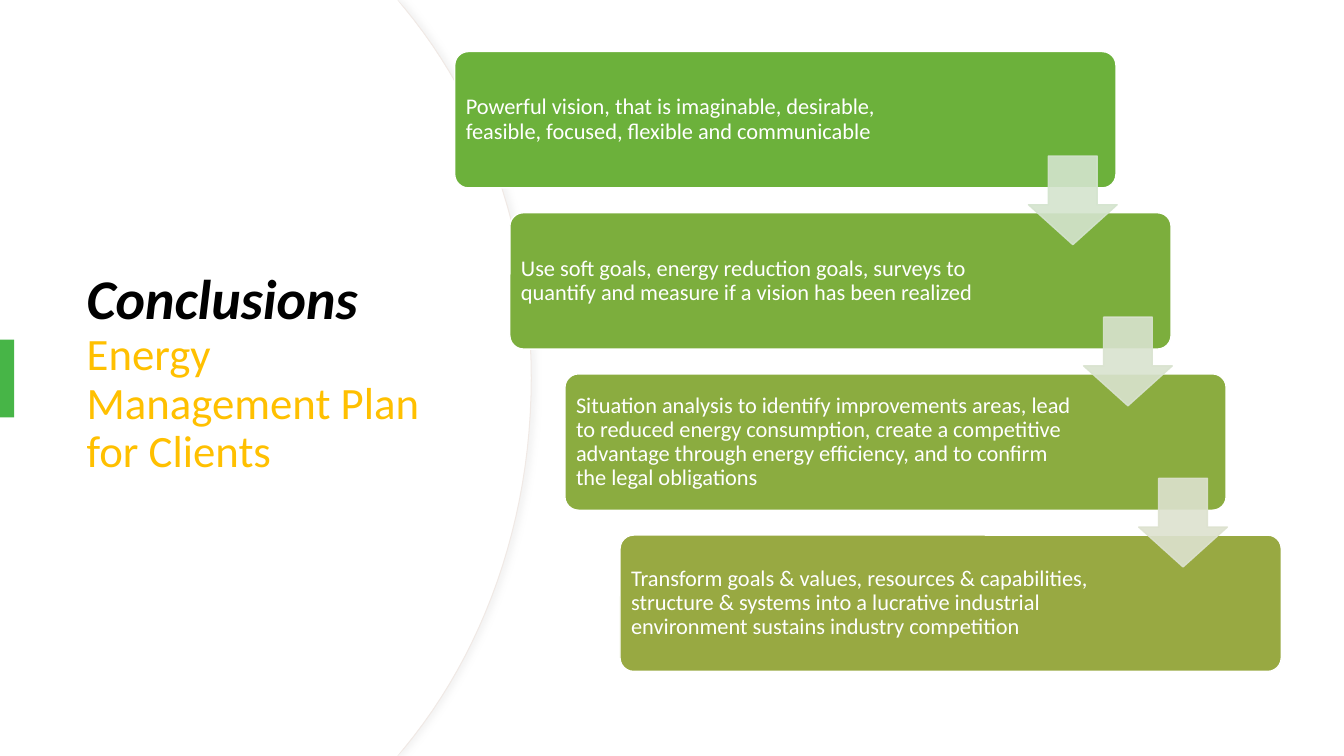
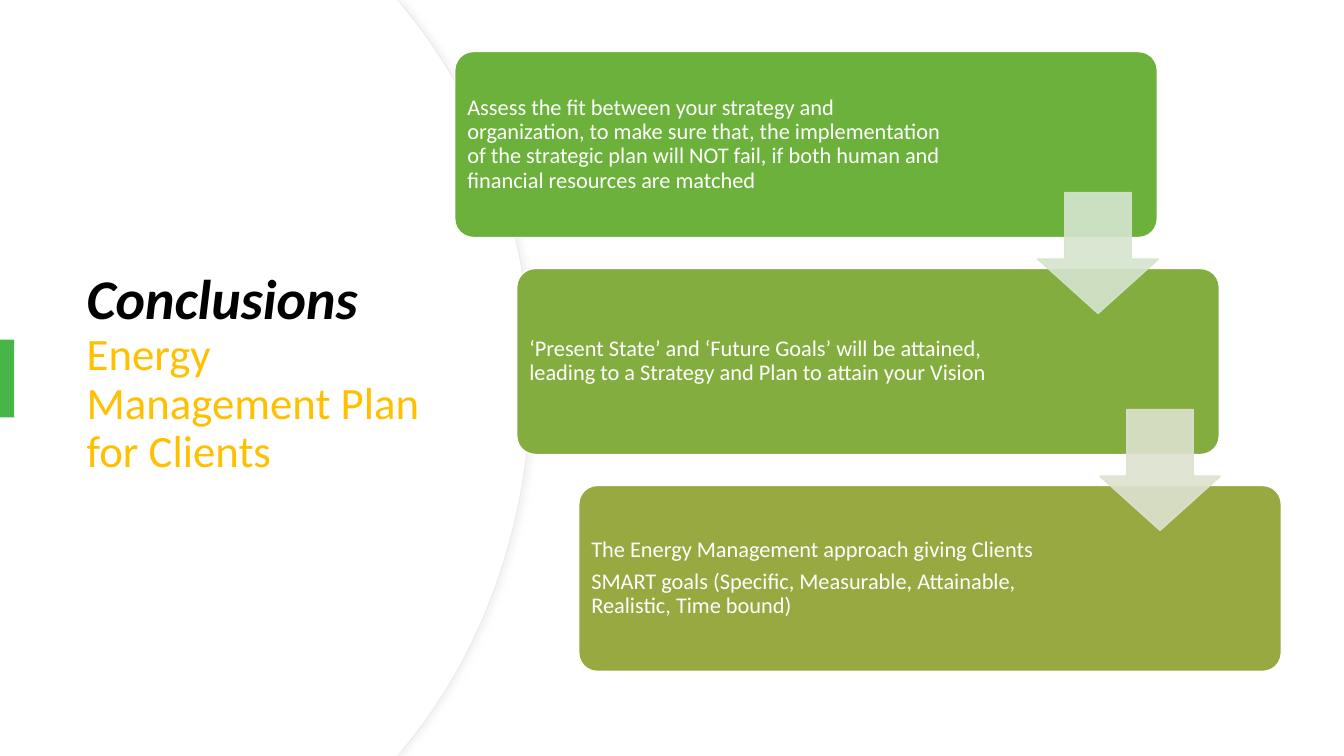
from lxml import etree
from pptx import Presentation
from pptx.dml.color import RGBColor
from pptx.enum.shapes import MSO_SHAPE
from pptx.enum.text import MSO_ANCHOR, MSO_AUTO_SIZE, PP_ALIGN
from pptx.oxml import parse_xml
from pptx.oxml.ns import nsdecls, qn
from pptx.util import Cm, Pt

RECT = MSO_SHAPE.RECTANGLE
ROUNDED = MSO_SHAPE.ROUNDED_RECTANGLE
DOWN_ARROW = MSO_SHAPE.DOWN_ARROW
MIDDLE = MSO_ANCHOR.MIDDLE
LEFT = PP_ALIGN.LEFT
NO_AUTOFIT = MSO_AUTO_SIZE.NONE

FONT = "Calibri"
WHITE = RGBColor(0xFF, 0xFF, 0xFF)
BLACK = RGBColor(0x00, 0x00, 0x00)
GOLD = RGBColor(0xFF, 0xC0, 0x00)
ACCENT = RGBColor(0x47, 0xB5, 0x47)
ARC_LINE = RGBColor(0xF0, 0xE9, 0xE5)
GREEN = RGBColor(0x6C, 0xB1, 0x3B)
LEAF = RGBColor(0x7C, 0xAE, 0x3D)
MOSS = RGBColor(0x84, 0xAD, 0x3F)
LIME = RGBColor(0x8B, 0xAC, 0x40)
OLIVE = RGBColor(0x98, 0xA9, 0x42)
PALE_GREEN = RGBColor(0xD4, 0xE4, 0xCE)
PALE_LEAF = RGBColor(0xD9, 0xE3, 0xCF)
PALE_OLIVE = RGBColor(0xDD, 0xE2, 0xCF)

TITLE = [
    ("Conclusions", 40, BLACK, True),
    ("Energy Management Plan for Clients", 32, GOLD, False),
]

SLIDES = [
    {
        "card_share": (0.8, 0.22),
        "cards": [
            (GREEN, ["Powerful vision, that is imaginable, desirable, feasible, "
                     "focused, flexible and communicable"]),
            (LEAF, ["Use soft goals, energy reduction goals, surveys to quantify "
                    "and measure if a vision has been realized"]),
            (LIME, ["Situation analysis to identify improvements areas, lead to "
                    "reduced energy consumption, create a competitive advantage "
                    "through energy efficiency, and to confirm the legal obligations"]),
            (OLIVE, ["Transform goals & values, resources & capabilities, structure "
                     "& systems into a lucrative industrial environment sustains "
                     "industry competition"]),
        ],
        "arrows": [PALE_GREEN, PALE_LEAF, PALE_OLIVE],
    },
    {
        "card_share": (0.85, 0.3),
        "cards": [
            (GREEN, ["Assess the fit between your strategy and organization, to make "
                     "sure that, the implementation of the strategic plan will NOT "
                     "fail, if both human and financial resources are matched"]),
            (MOSS, ["‘Present State’ and ‘Future Goals’ will be attained, leading to "
                    "a Strategy and Plan to attain your Vision"]),
            (OLIVE, ["The Energy Management approach giving Clients",
                     "SMART goals (Specific, Measurable, Attainable, Realistic, Time bound)"]),
        ],
        "arrows": [PALE_GREEN, PALE_OLIVE],
    },
]

SLIDE_W, SLIDE_H = 33.87, 19.05
STAIRS_X, STAIRS_Y, STAIRS_W, STAIRS_H = 11.46, 1.3, 20.83, 15.62
TEXT_W, INSET = 12.85, 0.18
CORNER = 0.1
ARROW_SHARE = 0.65
ARC_STEPS = 24


def paint(shape, fill, line=None, width=1):
    shape.shadow.inherit = False
    shape.fill.solid()
    shape.fill.fore_color.rgb = fill
    if line is None:
        shape.line.fill.background()
    else:
        shape.line.color.rgb = line
        shape.line.width = Pt(width)


def add_box(s, kind, x, y, w, h):
    return s.shapes.add_shape(kind, Cm(x), Cm(y), Cm(w), Cm(h))


def format_run(r, size, color):
    r.font.name = FONT
    r.font.size = Pt(size)
    r.font.color.rgb = color


def arc_points(shift):
    mid = SLIDE_H / 2
    controls = [(10.19 - shift, 0.2), (12.17 - shift, 2.59),
                (13.39 - shift, 5.89), (13.39 - shift, mid)]
    upper = []
    for i in range(ARC_STEPS + 1):
        t = i / ARC_STEPS
        weights = ((1 - t) ** 3, 3 * t * (1 - t) ** 2, 3 * t ** 2 * (1 - t), t ** 3)
        upper.append(tuple(sum(k * c[axis] for k, c in zip(weights, controls))
                           for axis in (0, 1)))
    upper.insert(0, (10.01, 0))
    lower = [(x, SLIDE_H - y) for x, y in reversed(upper[:-1])]
    return upper + lower + [(0, SLIDE_H)]


def add_arc(s, shift):
    builder = s.shapes.build_freeform(0, 0)
    builder.add_line_segments([(Cm(x), Cm(y)) for x, y in arc_points(shift)])
    return builder.convert_to_shape()


def add_soft_shadow(shape):
    effects = shape._element.spPr.find(qn("a:effectLst"))
    effects.append(parse_xml(
        f'<a:outerShdw {nsdecls("a")} blurRad="50800" dist="38100" dir="0">'
        '<a:srgbClr val="D9D9D9"><a:alpha val="30000"/></a:srgbClr></a:outerShdw>'))


def add_backdrop(s):
    rim = add_arc(s, 0)
    paint(rim, WHITE, ARC_LINE, 0.75)
    add_soft_shadow(rim)
    paint(add_arc(s, 0.03), WHITE)
    paint(add_box(s, RECT, 0, 8.56, 0.36, 1.96), ACCENT)


def set_title(s):
    title = s.shapes.title
    s.shapes._spTree.append(title._element)
    title.left, title.top, title.width, title.height = Cm(1.93), Cm(3.15), Cm(9.9), Cm(12.57)
    tf = title.text_frame
    tf.auto_size = NO_AUTOFIT
    tf.vertical_anchor = MIDDLE
    tf.text = "\n".join(text for text, *_ in TITLE)
    for p, (_, size, color, strong) in zip(tf.paragraphs, TITLE):
        p.alignment = LEFT
        p.line_spacing = 0.9
        r = p.runs[0]
        format_run(r, size, color)
        r.font.bold = r.font.italic = strong


def add_card(s, x, y, w, h, color, lines, text_w):
    card = add_box(s, ROUNDED, x, y, w, h)
    card.adjustments[0] = CORNER
    paint(card, color, WHITE)
    tf = card.text_frame
    tf.word_wrap = True
    tf.vertical_anchor = MIDDLE
    tf.margin_left = tf.margin_top = tf.margin_bottom = Cm(INSET)
    corner_inset = 0.29 * CORNER * h
    tf.margin_right = Cm(w - 2 * corner_inset - text_w + INSET)
    tf.text = "\n".join(lines)
    for p in tf.paragraphs:
        p.alignment = LEFT
        p.line_spacing = 0.9
        p.space_after = Pt(5.6)
        format_run(p.runs[0], 16, WHITE)


def add_arrow(s, x, y, size, color):
    arrow = add_box(s, DOWN_ARROW, x, y, size, size)
    arrow.adjustments[0] = 0.45
    arrow.adjustments[1] = 0.55
    arrow.adjustments[0], arrow.adjustments[1] = 0.55, 0.45
    paint(arrow, color, color)
    for clr in arrow._element.spPr.iter(qn("a:srgbClr")):
        etree.SubElement(clr, qn("a:alpha")).set("val", "90000")


def add_stairs(s, content):
    cards = content["cards"]
    share_w, share_h = content["card_share"]
    w, h = STAIRS_W * share_w, STAIRS_H * share_h
    steps = len(cards) - 1
    dx, dy = (STAIRS_W - w) / steps, (STAIRS_H - h) / steps
    for i, (color, lines) in enumerate(cards):
        text_w = TEXT_W if i else TEXT_W - 0.18
        add_card(s, STAIRS_X + i * dx, STAIRS_Y + i * dy, w, h, color, lines, text_w)
    size = ARROW_SHARE * h
    for i, color in enumerate(content["arrows"]):
        right = STAIRS_X + i * dx + w + 0.03
        gap_middle = STAIRS_Y + i * dy + (h + dy) / 2
        add_arrow(s, right - size, gap_middle - size / 2, size, color)


def main():
    prs = Presentation()
    prs.slide_width, prs.slide_height = Cm(SLIDE_W), Cm(SLIDE_H)
    title_only = prs.slide_layouts[5]
    for content in SLIDES:
        s = prs.slides.add_slide(title_only)
        add_backdrop(s)
        set_title(s)
        add_stairs(s, content)
    prs.save("out.pptx")


if __name__ == "__main__":
    main()
